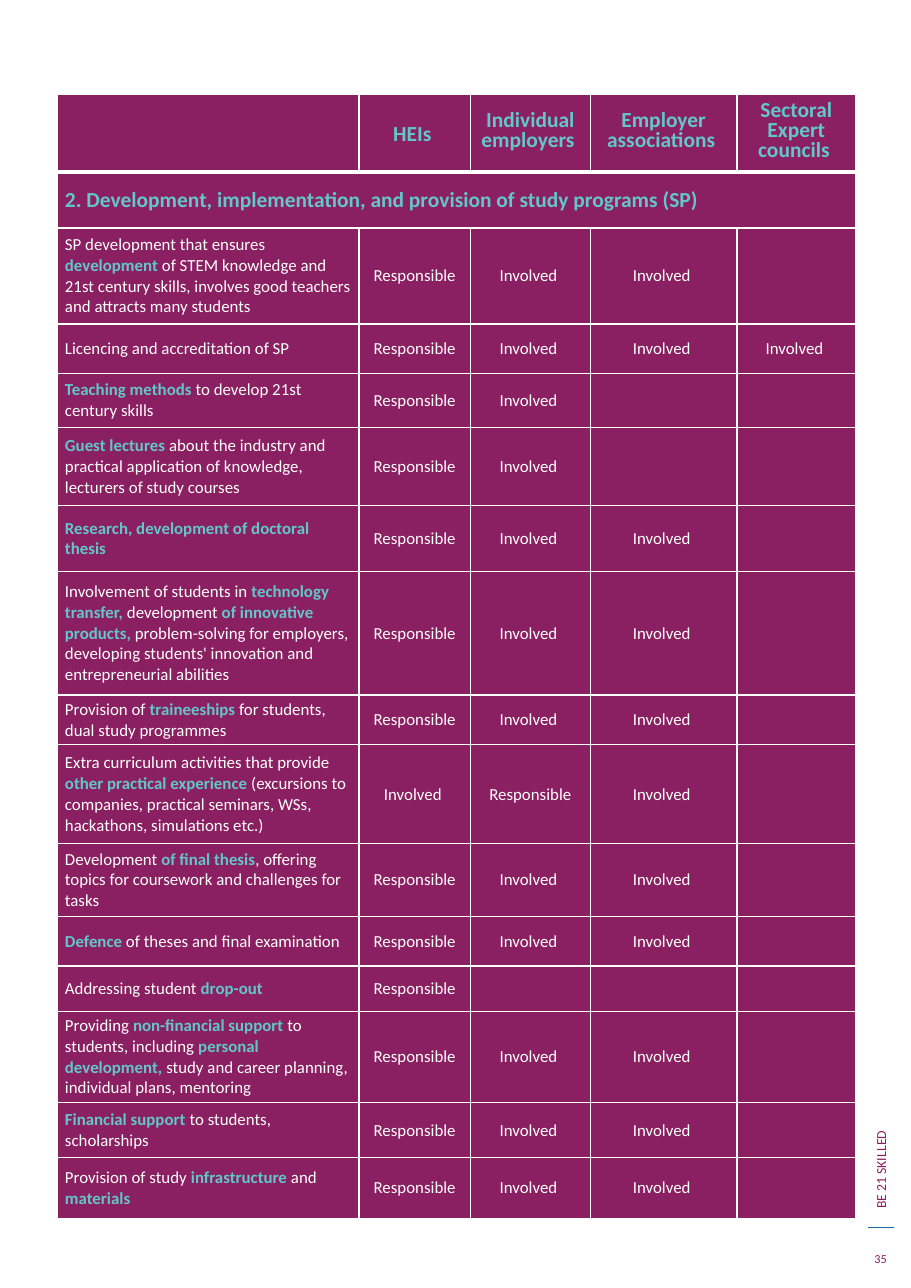
import pptx
import pptx.util
import pptx.dml.color
import pptx.enum.text
import pptx.enum.shapes
import lxml.etree

INK = {"plum": "8A2061", "teal": "63C7CA", "white": "FFFFFF", "blue": "186BA8"}
FONT = "Calibri"
PAGE = (8.27, 11.69)
LEFT, TOP = 0.52, 0.86
COLS = [2.74, 1.01, 1.09, 1.33, 1.08]
HEAD = [
    [],
    ["HEIs "],
    ["Individual", "employers "],
    ["Employer", "associations "],
    ["Sectoral", "Expert", "councils "],
]
HEAD_TALL = 0.7
PART = "2. Development, implementation, and provision of study programs (SP) "
PART_TALL = 0.51
ROLES = {"R": "Responsible", "I": "Involved ", "-": ""}
TASKS = [
    (0.87, "SP development that ensures *development *of STEM knowledge and 21st century skills, "
           "involves good teachers and attracts many students", "RII-"),
    (0.45, "Licencing and accreditation of SP", "RIII"),
    (0.49, "*Teaching methods *to develop 21st century skills", "RI--"),
    (0.71, "*Guest lectures *about the industry and practical application of knowledge, "
           "lecturers of study courses", "RI--"),
    (0.6, "*Research, development of doctoral thesis", "RII-"),
    (1.12, "Involvement of students in *technology transfer,* development *of innovative products,* "
           "problem-solving for employers, developing students' innovation and "
           "entrepreneurial abilities", "RII-"),
    (0.45, "Provision of *traineeships* for students, dual study programmes", "RII-"),
    (0.9, "Extra curriculum activities that provide *other practical experience *(excursions to "
          "companies, practical seminars, WSs, hackathons, simulations etc.)", "IRI-"),
    (0.66, "Development *of final thesis*, offering topics for coursework and challenges "
           "for tasks", "RII-"),
    (0.45, "*Defence *of theses and final examination", "RII-"),
    (0.41, "Addressing student *drop-out", "R---"),
    (0.83, "Providing *non-financial support* to students, including *personal development,* "
           "study and career planning, individual plans, mentoring", "RII-"),
    (0.5, "*Financial support *to students, scholarships", "RII-"),
    (0.55, "Provision of study *infrastructure* and *materials", "RII-"),
]

inch = pptx.util.Inches
Pt = pptx.util.Pt
ALIGN = pptx.enum.text.PP_ALIGN
MID = pptx.enum.text.MSO_ANCHOR.MIDDLE
A = "{http://schemas.openxmlformats.org/drawingml/2006/main}"


def tint(name):
    return pptx.dml.color.RGBColor.from_string(INK[name])


def add_run(para, text, size, ink, bold=False):
    run = para.add_run()
    run.text = text
    font = run.font
    font.name, font.size, font.bold = FONT, Pt(size), bold
    font.color.rgb = tint(ink)


def add_mix(para, text):
    for step, part in enumerate(text.split("*")):
        if part:
            bold = step % 2 == 1
            add_run(para, part, 11, "teal" if bold else "white", bold)


def style(cell, top=1, base=1):
    props = cell._tc.get_or_add_tcPr()
    for side, width in (("L", 1), ("R", 1), ("T", top), ("B", base)):
        line = lxml.etree.SubElement(props, A + "ln" + side, w=str(Pt(width)))
        fill = lxml.etree.SubElement(line, A + "solidFill")
        lxml.etree.SubElement(fill, A + "srgbClr", val=INK["white"])
    cell.fill.solid()
    cell.fill.fore_color.rgb = tint("plum")
    cell.margin_left = cell.margin_right = inch(0.07)
    cell.margin_top = cell.margin_bottom = 0
    cell.vertical_anchor = MID


def add_grid(slide):
    talls = [HEAD_TALL, PART_TALL] + [task[0] for task in TASKS]
    frame = slide.shapes.add_table(len(talls), len(COLS), inch(LEFT), inch(TOP),
                                   inch(sum(COLS)), inch(sum(talls)))
    grid = frame.table
    grid.first_row = grid.horz_banding = False
    for col, wide in zip(grid.columns, COLS):
        col.width = inch(wide)
    for num, (row, tall) in enumerate(zip(grid.rows, talls)):
        row.height = inch(tall)
        for cell in row.cells:
            style(cell, 3 if num == 1 else 1, 3 if num == 0 else 1)

    for col, lines in enumerate(HEAD):
        box = grid.cell(0, col).text_frame
        for num, text in enumerate(lines):
            para = box.add_paragraph() if num else box.paragraphs[0]
            para.alignment = ALIGN.CENTER
            para.line_spacing = Pt(12.8) if len(lines) > 1 else 1.07
            add_run(para, text, 14, "teal", True)

    grid.cell(1, 0).merge(grid.cell(1, len(COLS) - 1))
    para = grid.cell(1, 0).text_frame.paragraphs[0]
    para.alignment = ALIGN.JUSTIFY
    add_run(para, PART, 14, "teal", True)

    for row, (tall, text, roles) in enumerate(TASKS, 2):
        add_mix(grid.cell(row, 0).text_frame.paragraphs[0], text)
        for col, role in enumerate(roles, 1):
            if ROLES[role]:
                para = grid.cell(row, col).text_frame.paragraphs[0]
                para.alignment = ALIGN.CENTER
                add_run(para, ROLES[role], 11, "white")


def add_note(slide, area, text, size, align, turn=0):
    box = slide.shapes.add_textbox(*map(inch, area))
    box.rotation = turn
    frame = box.text_frame
    frame.word_wrap = True
    if not turn:
        frame.vertical_anchor = MID
    para = frame.paragraphs[0]
    para.alignment = align
    add_run(para, text, size, "plum")


def add_rule(slide):
    kind = pptx.enum.shapes.MSO_CONNECTOR.STRAIGHT
    rule = slide.shapes.add_connector(kind, *map(inch, (8.12, 11.14, 7.88, 11.14)))
    rule.line.color.rgb = tint("blue")
    rule.line.width = Pt(0.75)
    lxml.etree.SubElement(rule._element.spPr, A + "effectLst")


def main():
    deck = pptx.Presentation()
    deck.slide_width, deck.slide_height = map(inch, PAGE)
    slide = deck.slides.add_slide(deck.slide_layouts[6])
    add_note(slide, (6.26, 9.21, 3.47, 0.25), "BE 21 SKILLED", 9, ALIGN.LEFT, 270)
    add_rule(slide)
    add_note(slide, (7.8, 11.28, 0.39, 0.29), "35", 8, ALIGN.CENTER)
    add_grid(slide)
    deck.save("out.pptx")


if __name__ == "__main__":
    main()
